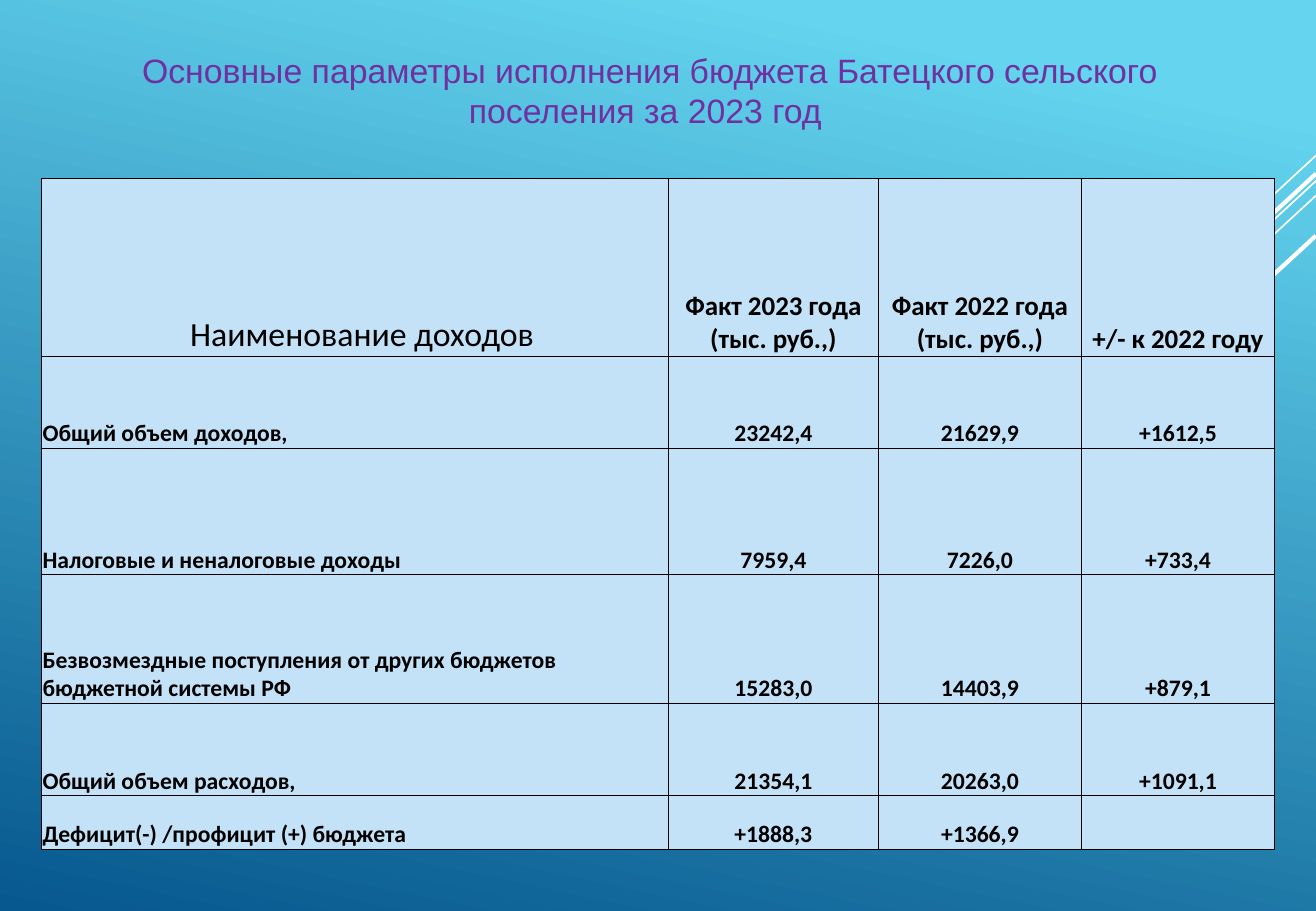
"""Builds the slide with the main budget execution figures for 2023."""
from lxml.etree import SubElement
from pptx import Presentation
from pptx.dml.color import RGBColor
from pptx.enum.shapes import MSO_CONNECTOR
from pptx.enum.text import MSO_ANCHOR, PP_ALIGN
from pptx.oxml.ns import qn
from pptx.util import Inches, Pt

SKY = RGBColor(0x64, 0xD4, 0xEF)
DEEP_BLUE = RGBColor(0x06, 0x58, 0x8E)
WHITE = RGBColor(0xFF, 0xFF, 0xFF)
BLACK = RGBColor(0x00, 0x00, 0x00)
PALE_BLUE = RGBColor(0xC3, 0xE2, 0xF7)
PURPLE = RGBColor(0x70, 0x30, 0xA0)

DIAGONALS = [
    (10.83, 1.28, 7.12, 4.71, 1),
    (10.84, 1.48, 5.14, 6.74, 1),
    (10.83, 1.61, 6.19, 5.89, 1),
    (10.83, 1.43, 6.28, 5.63, 2.5),
    (10.83, 1.94, 6.76, 5.69, 2.5),
]
COLUMN_WIDTHS = [5.16, 1.73, 1.67, 1.59]
ROW_HEIGHTS = [1.46, 0.76, 1.04, 1.06, 0.76, 0.44]
BUDGET_ROWS = [
    ("Наименование доходов", "Факт 2023 года\n(тыс. руб.,)", "Факт 2022 года\n(тыс. руб.,)", "+/- к 2022 году"),
    ("Общий объем доходов,", "23242,4", "21629,9", "+1612,5"),
    ("Налоговые и неналоговые доходы", "7959,4", "7226,0", "+733,4"),
    ("Безвозмездные поступления от других бюджетов бюджетной системы РФ", "15283,0", "14403,9", "+879,1"),
    ("Общий объем расходов,", "21354,1", "20263,0", "+1091,1"),
    ("Дефицит(-) /профицит (+) бюджета", "+1888,3", "+1366,9", ""),
]
TITLE = "Основные параметры исполнения бюджета Батецкого сельского\nпоселения за 2023 год "


def format_text(text_frame, alignment, font_values):
    """Align every paragraph and apply the font values to its runs."""
    for paragraph in text_frame.paragraphs:
        paragraph.alignment = alignment
        for run in paragraph.runs:
            run.font.color.rgb = font_values["color"]
            for name in ("name", "size", "bold"):
                setattr(run.font, name, font_values[name])


def add_borders(cell):
    """Draw a thin black line on all four sides of a cell."""
    properties = cell._tc.get_or_add_tcPr()
    for side in ("a:lnL", "a:lnR", "a:lnT", "a:lnB"):
        border = SubElement(properties, qn(side), w=str(Pt(0.5)))
        solid_fill = SubElement(border, qn("a:solidFill"))
        SubElement(solid_fill, qn("a:srgbClr"), val=str(BLACK))


presentation = Presentation()
presentation.slide_width = Inches(10.83)
presentation.slide_height = Inches(7.5)
slide = presentation.slides.add_slide(presentation.slide_layouts[6])

background = slide.background.fill
background.gradient()
background.gradient_angle = 258
for stop, position, color in zip(background.gradient_stops, (0.1, 1), (SKY, DEEP_BLUE)):
    stop.position = position
    stop.color.rgb = color

for *ends, width in DIAGONALS:
    diagonal = slide.shapes.add_connector(MSO_CONNECTOR.STRAIGHT, *map(Inches, ends))
    diagonal.line.color.rgb = WHITE
    diagonal.line.width = Pt(width)
    SubElement(diagonal._element.spPr, qn("a:effectLst"))

table = slide.shapes.add_table(
    len(ROW_HEIGHTS), len(COLUMN_WIDTHS), Inches(0.34), Inches(1.47), Inches(10.16), Inches(5.51)
).table
for column, width in zip(table.columns, COLUMN_WIDTHS):
    column.width = Inches(width)
for row, height in zip(table.rows, ROW_HEIGHTS):
    row.height = Inches(height)

for row_index, texts in enumerate(BUDGET_ROWS):
    for column_index, text in enumerate(texts):
        cell = table.cell(row_index, column_index)
        is_header = row_index == 0
        is_corner = is_header and column_index == 0
        cell_values = {
            "text": text,
            "vertical_anchor": MSO_ANCHOR.BOTTOM,
            "margin_left": Inches(0.13 if is_corner else 0.01),
            "margin_right": Inches(0.01),
            "margin_top": Inches(0.01),
            "margin_bottom": 0,
        }
        for name, value in cell_values.items():
            setattr(cell, name, value)
        add_borders(cell)
        cell.fill.solid()
        cell.fill.fore_color.rgb = PALE_BLUE
        size = 20 if is_corner else 16 if is_header else 14
        alignment = PP_ALIGN.CENTER if is_header or column_index else PP_ALIGN.LEFT
        font_values = {"name": "Calibri", "size": Pt(size), "bold": not is_corner, "color": BLACK}
        format_text(cell.text_frame, alignment, font_values)

title = slide.shapes.add_textbox(Inches(0.29), Inches(0.36), Inches(10.12), Inches(0.77))
title.text_frame.word_wrap = True
title.text_frame.text = TITLE
title_font = {"name": "Arial", "size": Pt(20), "bold": False, "color": PURPLE}
format_text(title.text_frame, PP_ALIGN.CENTER, title_font)

presentation.save("out.pptx")
